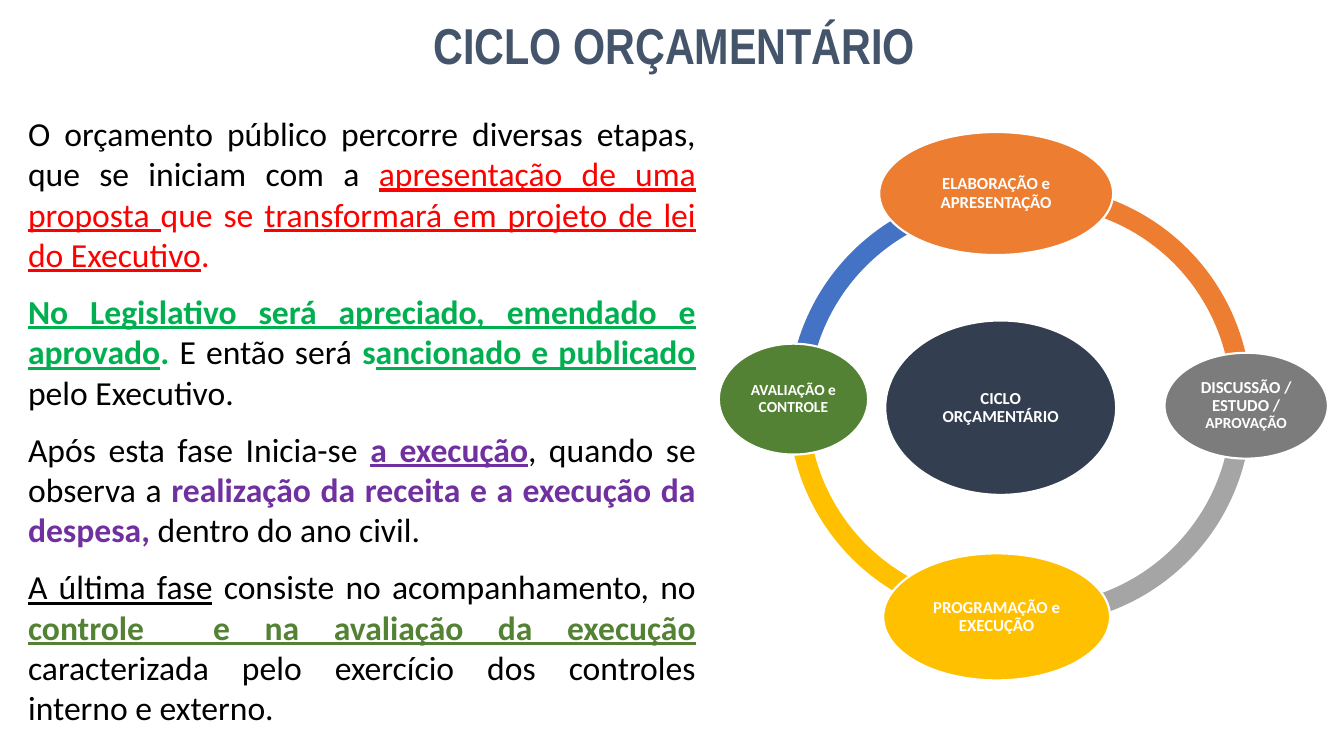
from typing import NamedTuple

import pptx
import pptx.dml.color
import pptx.enum.shapes
import pptx.enum.text
import pptx.util

PX = 9144
DEGREE = 0.6
RING_SIZE = 430
RING_THICKNESS = 0.046
COLORS = {
    "white": "FFFFFF", "black": "000000", "slate": "44546A", "navy": "333F50",
    "blue": "4472C4", "gold": "FFC000", "silver": "A5A5A5", "orange": "ED7D31",
    "gray": "7C7C7C", "moss": "548235", "red": "FF0000", "green": "00B050",
    "purple": "7030A0",
}
ALIGN = pptx.enum.text.PP_ALIGN
SHAPE = pptx.enum.shapes.MSO_SHAPE


class Arc(NamedTuple):
    x: int
    y: int
    start: float
    end: float
    color: str


class Run(NamedTuple):
    text: str
    color: str = "black"
    bold: bool = False
    underline: bool = False
    size: int | None = None


class Stage(NamedTuple):
    x: int
    y: int
    w: int
    h: int
    color: str
    runs: list[Run]
    size: int = 12


ARCS = [
    Arc(782, 187, 181.63, 267.47, "blue"),
    Arc(782, 187, 92.53, 181.74, "gold"),
    Arc(811, 190, 359.21, 100.25, "silver"),
    Arc(811, 184, 259.75, 1.04, "orange"),
]

STAGES = [
    Stage(878, 318, 229, 173, "navy", [Run("CICLO ORÇAMENTÁRIO", "white", True)]),
    Stage(872, 131, 232, 122, "orange", [Run("ELABORAÇÃO e APRESENTAÇÃO", "white", True)]),
    Stage(1155, 350, 162, 105, "gray", [
        Run("DISCUSSÃO / ESTUDO / ", "white", True),
        Run("APROVAÇÃO", "white", True, size=11),
    ]),
    Stage(876, 549, 225, 126, "gold", [Run("PROGRAMAÇÃO e EXECUÇÃO", "white", True)]),
    Stage(713, 341, 148, 110, "moss", [Run("AVALIAÇÃO e CONTROLE", "white", True)], 11),
]

PARAGRAPHS = [
    [
        Run("O orçamento público percorre diversas etapas, que se iniciam com a "),
        Run("apresentação de uma proposta ", "red", underline=True),
        Run("que se ", "red"),
        Run("transformará em projeto de lei do Executivo", "red", underline=True),
        Run(".", "red"),
    ],
    [
        Run("No Legislativo será apreciado, emendado e aprovado", "green", True, True),
        Run(". ", "green", True),
        Run("E então será "),
        Run("s", "green", True),
        Run("ancionado e publicado", "green", True, True),
        Run(" pelo Executivo."),
    ],
    [
        Run("Após esta fase Inicia-se "),
        Run("a execução", "purple", True, True),
        Run(", quando se observa a "),
        Run("realização da receita e a execução da despesa,", "purple", True),
        Run(" dentro do ano civil."),
    ],
    [
        Run("A última fase", underline=True),
        Run(" consiste no acompanhamento, no "),
        Run("controle  e na avaliação da execução", "moss", True, True),
        Run(" caracterizada pelo exercício dos controles interno e externo."),
    ],
]


def rgb(color: str) -> pptx.dml.color.RGBColor:
    return pptx.dml.color.RGBColor.from_string(COLORS[color])


def write(p, runs: list[Run], size: int, align, font: str = "Calibri") -> None:
    p.alignment = align
    p.font.name = font
    p.font.size = pptx.util.Pt(size)
    for run in runs:
        r = p.add_run()
        r.text = run.text
        r.font.color.rgb = rgb(run.color)
        r.font.bold = run.bold
        r.font.underline = run.underline
        if run.size:
            r.font.size = pptx.util.Pt(run.size)


def add_text(s, x: int, y: int, w: int, h: int):
    tf = s.shapes.add_textbox(x * PX, y * PX, w * PX, h * PX).text_frame
    tf.word_wrap = True
    return tf


def add_filled(s, kind, x: int, y: int, w: int, h: int, color: str):
    sp = s.shapes.add_shape(kind, x * PX, y * PX, w * PX, h * PX)
    sp.shadow.inherit = False
    sp.fill.solid()
    sp.fill.fore_color.rgb = rgb(color)
    return sp


def add_arc(s, arc: Arc) -> None:
    sp = add_filled(s, SHAPE.BLOCK_ARC, arc.x, arc.y, RING_SIZE, RING_SIZE, arc.color)
    sp.line.fill.background()
    sp.adjustments[0] = arc.start * DEGREE
    sp.adjustments[1] = arc.end * DEGREE
    sp.adjustments[2] = RING_THICKNESS


def add_stage(s, stage: Stage) -> None:
    sp = add_filled(s, SHAPE.OVAL, stage.x, stage.y, stage.w, stage.h, stage.color)
    sp.line.color.rgb = rgb("white")
    sp.line.width = pptx.util.Pt(1.5)
    tf = sp.text_frame
    tf.word_wrap = True
    tf.vertical_anchor = pptx.enum.text.MSO_ANCHOR.MIDDLE
    tf.margin_left = tf.margin_right = tf.margin_top = tf.margin_bottom = 2 * PX
    p = tf.paragraphs[0]
    p.line_spacing = 0.9
    write(p, stage.runs, stage.size, ALIGN.CENTER)


def main() -> None:
    prs = pptx.Presentation()
    prs.slide_width, prs.slide_height = 1333 * PX, 750 * PX
    s = prs.slides.add_slide(prs.slide_layouts[6])

    tf = add_text(s, 346, 9, 646, 71)
    title = [Run("CICLO ORÇAMENTÁRIO", "slate", True)]
    write(tf.paragraphs[0], title, 36, ALIGN.CENTER, "Arial Narrow")

    for arc in ARCS:
        add_arc(s, arc)
    for stage in STAGES:
        add_stage(s, stage)

    tf = add_text(s, 18, 107, 682, 530)
    for i, runs in enumerate(PARAGRAPHS):
        p = tf.add_paragraph() if i else tf.paragraphs[0]
        p.space_before = pptx.util.Pt(12)
        write(p, runs, 24, ALIGN.JUSTIFY)

    prs.save("out.pptx")


if __name__ == "__main__":
    main()
